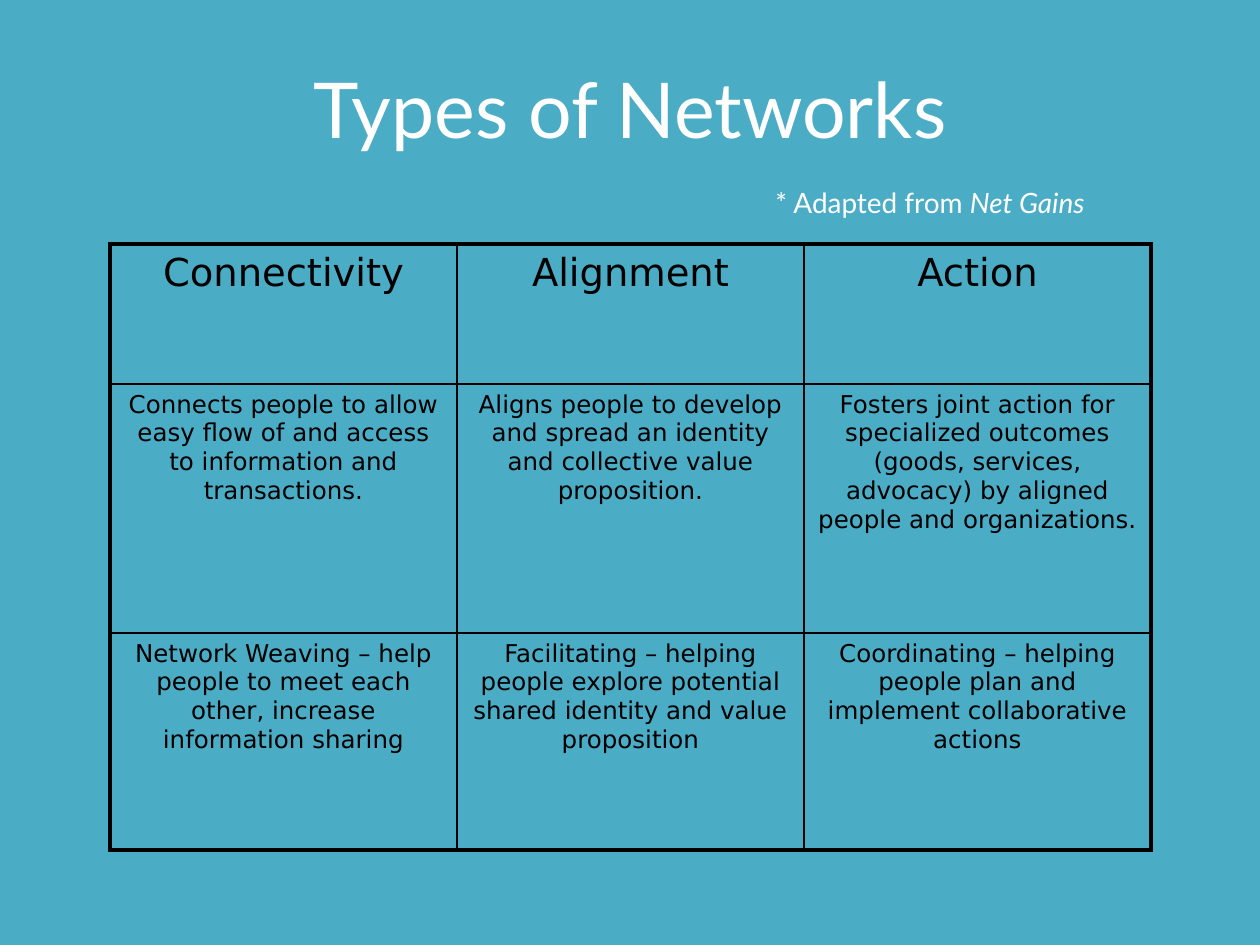
from dataclasses import dataclass

from lxml import etree
from pptx import Presentation
from pptx.dml.color import RGBColor
from pptx.enum.text import MSO_ANCHOR, MSO_AUTO_SIZE, PP_ALIGN
from pptx.oxml.ns import qn
from pptx.util import Pt

CENTER, RIGHT = PP_ALIGN.CENTER, PP_ALIGN.RIGHT
MIDDLE = MSO_ANCHOR.MIDDLE
NO_FIT = MSO_AUTO_SIZE.NONE
PX = 914400 / 126
TITLE_ONLY = 5
COLORS = {"background": "4BACC6", "light": "FFFFFF", "dark": "000000"}
THIN, THICK = 1, 2.25

TITLE_FONT = {"name": "Lato", "size": Pt(44)}
NOTE_FONT = {"name": "Lato", "size": Pt(16)}
HEAD_FONT = {"name": "DejaVu Sans", "size": Pt(22)}
BODY_FONT = {"name": "DejaVu Sans", "size": Pt(14)}


@dataclass
class Box:
    left: int
    top: int
    width: int
    height: int

    def emu(self) -> list[int]:
        return [px(v) for v in (self.left, self.top, self.width, self.height)]


@dataclass
class NetworkType:
    name: str
    purpose: str
    role: str


NETWORKS = [
    NetworkType(
        "Connectivity",
        "Connects people to allow easy flow of and access to information and transactions.",
        "Network Weaving – help people to meet each other, increase information sharing",
    ),
    NetworkType(
        "Alignment",
        "Aligns people to develop and spread an identity and collective value proposition.",
        "Facilitating – helping people explore potential shared identity and value proposition",
    ),
    NetworkType(
        "Action",
        "Fosters joint action for specialized outcomes (goods, services, advocacy) "
        "by aligned people and organizations.",
        "Coordinating – helping people plan and implement collaborative actions",
    ),
]
COL_WIDTH = 347
ROW_HEIGHTS = [140, 249, 217]
TITLE_BOX = Box(0, 30, 1260, 156)
NOTE_BOX = Box(697, 178, 400, 48)
TABLE_BOX = Box(110, 244, COL_WIDTH * len(NETWORKS), sum(ROW_HEIGHTS))


def px(n: int) -> int:
    return round(n * PX)


def add_run(p, text: str, font: dict, color: str, italic: bool = False) -> None:
    r = p.add_run()
    r.text = text
    for key, value in {**font, "italic": italic}.items():
        setattr(r.font, key, value)
    r.font.color.rgb = RGBColor.from_string(COLORS[color])


def format_frame(tf) -> None:
    for key, value in {
        "word_wrap": True, "auto_size": NO_FIT, "vertical_anchor": MIDDLE,
    }.items():
        setattr(tf, key, value)


def add_title(s) -> None:
    sp = s.shapes.title
    sp.left, sp.top, sp.width, sp.height = TITLE_BOX.emu()
    format_frame(sp.text_frame)
    p = sp.text_frame.paragraphs[0]
    p.alignment = CENTER
    add_run(p, "Types of Networks", TITLE_FONT, "light")


def add_note(s) -> None:
    tf = s.shapes.add_textbox(*NOTE_BOX.emu()).text_frame
    format_frame(tf)
    p = tf.paragraphs[0]
    p.alignment = RIGHT
    add_run(p, "* Adapted from ", NOTE_FONT, "light")
    add_run(p, "Net Gains", NOTE_FONT, "light", italic=True)


def set_borders(cell, outer: dict[str, bool]) -> None:
    tc_pr = cell._tc.get_or_add_tcPr()
    for side, is_outer in outer.items():
        width = Pt(THICK if is_outer else THIN)
        ln = etree.SubElement(tc_pr, qn(f"a:ln{side}"), w=str(width))
        fill = etree.SubElement(ln, qn("a:solidFill"))
        etree.SubElement(fill, qn("a:srgbClr"), val=COLORS["dark"])


def add_network_table(s) -> None:
    rows, cols = len(ROW_HEIGHTS), len(NETWORKS)
    table = s.shapes.add_table(rows, cols, *TABLE_BOX.emu()).table
    table.first_row = table.horz_banding = False
    for row, height in zip(table.rows, ROW_HEIGHTS):
        row.height = px(height)
    for j, network in enumerate(NETWORKS):
        table.columns[j].width = px(COL_WIDTH)
        for i, text in enumerate((network.name, network.purpose, network.role)):
            cell = table.cell(i, j)
            p = cell.text_frame.paragraphs[0]
            p.alignment = CENTER
            add_run(p, text, HEAD_FONT if i == 0 else BODY_FONT, "dark")
            set_borders(cell, {
                "L": j == 0, "R": j == cols - 1, "T": i == 0, "B": i == rows - 1,
            })
            cell.fill.background()


def main() -> None:
    prs = Presentation()
    prs.slide_width, prs.slide_height = px(1260), px(945)
    s = prs.slides.add_slide(prs.slide_layouts[TITLE_ONLY])
    s.background.fill.solid()
    s.background.fill.fore_color.rgb = RGBColor.from_string(COLORS["background"])
    add_title(s)
    add_note(s)
    add_network_table(s)
    prs.save("out.pptx")


if __name__ == "__main__":
    main()
